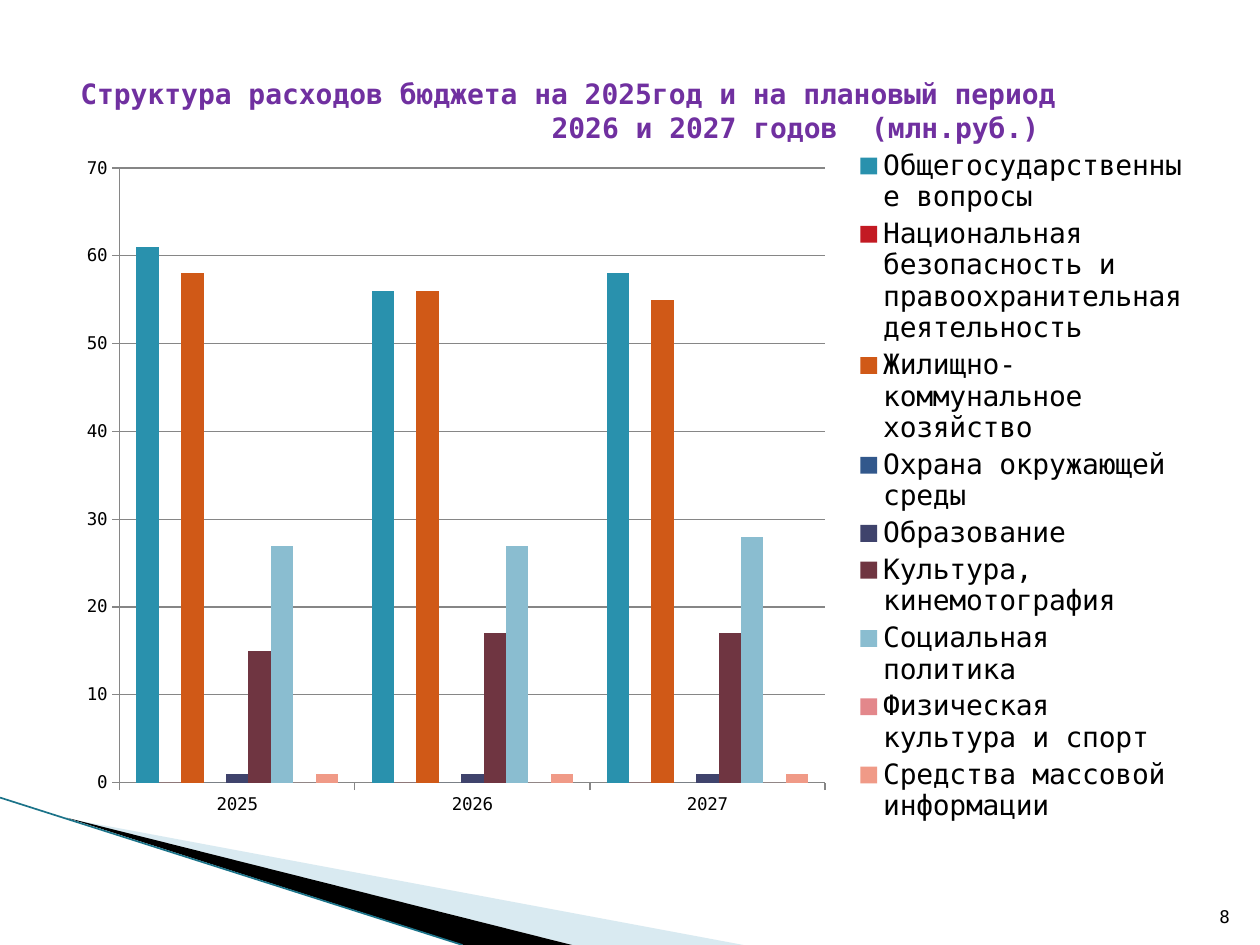
from lxml import etree
from pptx import Presentation
from pptx.chart.data import CategoryChartData
from pptx.dml.color import RGBColor
from pptx.enum.chart import XL_CHART_TYPE as Kind, XL_LEGEND_POSITION as Side, XL_TICK_MARK as Tick
from pptx.enum.shapes import MSO_CONNECTOR as Link
from pptx.enum.text import MSO_ANCHOR as Anchor, PP_ALIGN as Align
from pptx.oxml import parse_xml
from pptx.oxml.ns import nsdecls, qn
from pptx.util import Inches, Pt

FONT = "DejaVu Sans Mono"
BLACK = RGBColor(0, 0, 0)
PURPLE = RGBColor(0x70, 0x30, 0xA0)
PALE = RGBColor(0xA0, 0xCB, 0xDC)
TEAL = RGBColor(0x1B, 0x73, 0x89)
GREY = RGBColor(0x86, 0x86, 0x86)

# Content: title lines with their indent, then spending by year
TITLE = [("Структура расходов бюджета на 2025год и на плановый период", 0.03),
         ("2026 и 2027 годов  (млн.руб.)", 3.77)]
YEARS = ["2025", "2026", "2027"]
SPENDING = [
    ("Общегосударственные вопросы", (61, 56, 58), RGBColor(0x29, 0x91, 0xAD)),
    ("Национальная безопасность и правоохранительная деятельность",
     (0, 0, 0), RGBColor(0xC3, 0x1A, 0x23)),
    ("Жилищно-коммунальное хозяйство", (58, 56, 55), RGBColor(0xD0, 0x59, 0x17)),
    ("Охрана окружающей среды", (0, 0, 0), RGBColor(0x32, 0x58, 0x8C)),
    ("Образование", (1, 1, 1), RGBColor(0x3F, 0x43, 0x6C)),
    ("Культура, кинемотография", (15, 17, 17), RGBColor(0x6F, 0x35, 0x41)),
    ("Социальная политика", (27, 27, 28), RGBColor(0x8A, 0xBD, 0xD0)),
    ("Физическая культура и спорт", (0, 0, 0), RGBColor(0xE3, 0x87, 0x8B)),
    ("Средства массовой информации", (1, 1, 1), RGBColor(0xF0, 0x9A, 0x87)),
]
# Corner wedges: points, fill, opacity in percent
WEDGES = [
    ([(0.55, 6.5), (5.9, 7.5), (4.54, 7.5)], PALE, 40),
    ([(0.53, 6.49), (4.54, 7.5), (3.68, 7.5)], BLACK, 100),
]


def add_text(slide, lines, box, size, color=BLACK, bold=False,
             align=Align.LEFT, anchor=Anchor.MIDDLE):
    frame = slide.shapes.add_textbox(*map(Inches, box)).text_frame
    frame.word_wrap = True
    frame.vertical_anchor = anchor
    for i, (text, indent) in enumerate(lines):
        para = frame.paragraphs[0] if i == 0 else frame.add_paragraph()
        para.alignment = align
        para._p.get_or_add_pPr().set("marL", str(Inches(indent)))
        run = para.add_run()
        run.text = text
        font = run.font
        font.name, font.size, font.bold = FONT, Pt(size), bold
        font.color.rgb = color


def add_wedge(slide, points, color, alpha):
    start, *rest = [(Inches(x), Inches(y)) for x, y in points]
    pen = slide.shapes.build_freeform(*start)
    pen.add_line_segments(rest)
    shape = pen.convert_to_shape()
    shape.shadow.inherit = False
    shape.line.fill.background()
    shape.fill.solid()
    shape.fill.fore_color.rgb = color
    tint = shape._element.spPr.find(qn("a:solidFill"))[0]
    etree.SubElement(tint, qn("a:alpha")).set("val", str(alpha * 1000))


def set_place(part, x, y, w, h, inner=False):
    """Place a chart part by fractions of the chart area."""
    target = '<c:layoutTarget val="inner"/>' if inner else ""
    sizes = "".join(f'<c:{tag} val="{val}"/>' for tag, val in zip("xywh", (x, y, w, h)))
    layout = parse_xml(
        f'<c:layout {nsdecls("c")}><c:manualLayout>{target}<c:xMode val="edge"/>'
        f'<c:yMode val="edge"/>{sizes}</c:manualLayout></c:layout>')
    old = part.find(qn("c:layout"))
    if old is not None:
        part.remove(old)
    where = part.find(qn("c:legendPos"))
    part.insert(0 if where is None else part.index(where) + 1, layout)


def add_bars(slide, box):
    data = CategoryChartData()
    data.categories = YEARS
    for name, values, _ in SPENDING:
        data.add_series(name, values)
    chart = slide.shapes.add_chart(Kind.COLUMN_CLUSTERED, *map(Inches, box), data).chart
    chart.has_title = False
    chart.font.name, chart.font.size = FONT, Pt(18)
    chart.font.color.rgb = BLACK

    # Bars
    plot = chart.plots[0]
    plot.gap_width, plot.overlap = 150, 0
    plot.vary_by_categories = False
    for series, (_, _, color) in zip(plot.series, SPENDING):
        series.format.fill.solid()
        series.format.fill.fore_color.rgb = color

    # Axes and grid
    scale = chart.value_axis
    scale.minimum_scale, scale.maximum_scale, scale.major_unit = 0, 70, 10
    scale.has_major_gridlines = True
    lines = [scale.major_gridlines.format.line]
    for axis in (chart.category_axis, scale):
        axis.tick_labels.font.size = Pt(10)
        axis.major_tick_mark = Tick.OUTSIDE
        lines.append(axis.format.line)
    for line in lines:
        line.color.rgb, line.width = GREY, Pt(0.75)

    # Legend and layout
    chart.has_legend = True
    legend = chart.legend
    legend.position, legend.include_in_layout = Side.RIGHT, False
    legend.font.size = Pt(16)
    set_place(legend._element, 0.7, 0, 0.29, 1)
    area = chart._chartSpace.find(".//" + qn("c:plotArea"))
    set_place(area, 0.05, 0.034, 0.622, 0.9, inner=True)


def main():
    deck = Presentation()
    deck.slide_width, deck.slide_height = Inches(10), Inches(7.5)
    slide = deck.slides.add_slide(deck.slide_layouts[6])

    # Corner decoration
    for wedge in WEDGES:
        add_wedge(slide, *wedge)
    edge = slide.shapes.add_connector(
        Link.STRAIGHT, *map(Inches, (0, 6.33, 3.67, 7.5)))
    edge.line.color.rgb, edge.line.width = TEAL, Pt(0.95)
    etree.SubElement(edge._element.spPr, qn("a:effectLst"))

    # Page number, title and chart
    add_text(slide, [("8", 0)], (9.46, 7.01, 0.4, 0.4), 10,
             align=Align.RIGHT, anchor=Anchor.BOTTOM)
    add_text(slide, TITLE, (0.51, 0.52, 9.06, 0.71), 16, color=PURPLE, bold=True)
    add_bars(slide, (0.5, 1.15, 9, 5.42))
    deck.save("out.pptx")


if __name__ == "__main__":
    main()
